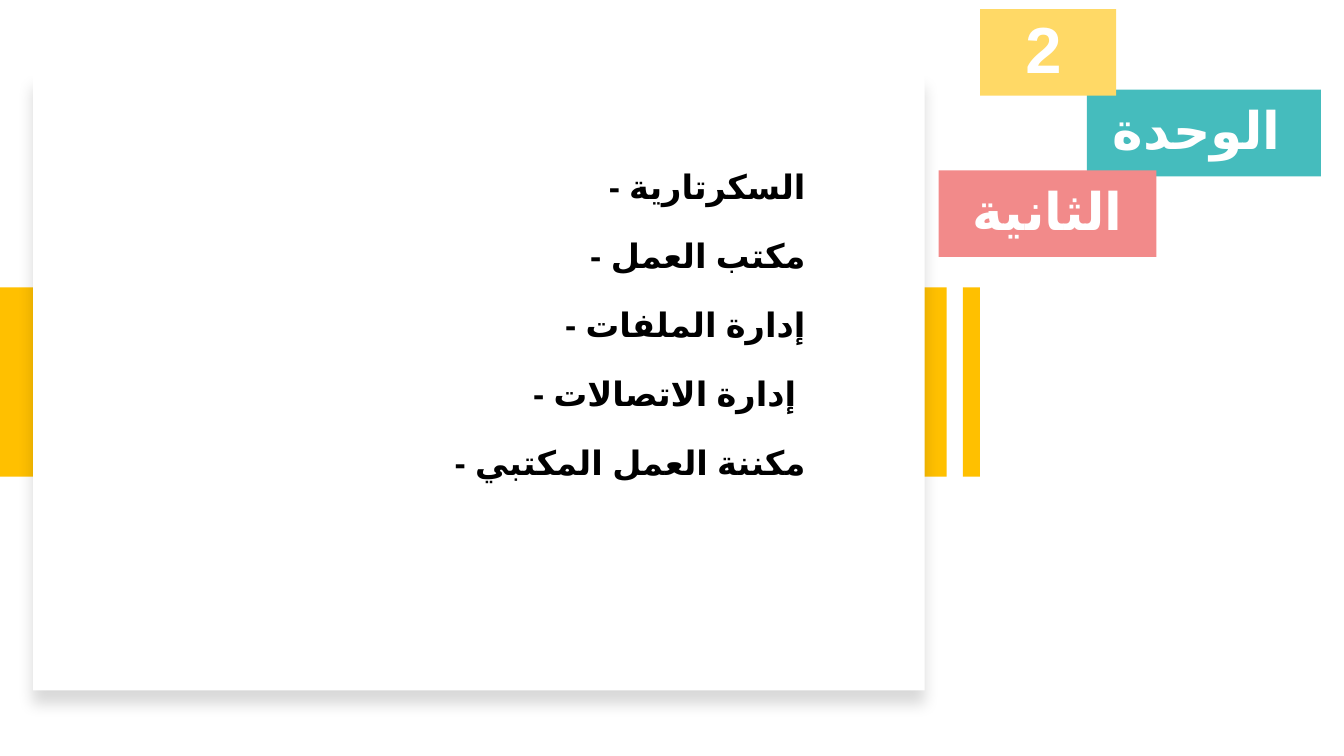
from lxml import etree
from pptx import Presentation
from pptx.dml.color import RGBColor
from pptx.enum.lang import MSO_LANGUAGE_ID
from pptx.enum.shapes import MSO_SHAPE
from pptx.enum.text import MSO_ANCHOR, MSO_AUTO_SIZE, PP_ALIGN
from pptx.oxml.ns import qn
from pptx.util import Inches, Pt

ARABIC = MSO_LANGUAGE_ID.ARABIC
RECTANGLE = MSO_SHAPE.RECTANGLE
CENTER, RIGHT = PP_ALIGN.CENTER, PP_ALIGN.RIGHT
MIDDLE, TOP = MSO_ANCHOR.MIDDLE, MSO_ANCHOR.TOP
NO_FIT, GROW = MSO_AUTO_SIZE.NONE, MSO_AUTO_SIZE.SHAPE_TO_FIT_TEXT

COLORS = {
    "white": "FFFFFF",
    "black": "000000",
    "teal": "45BCBD",
    "pink": "F28A8A",
    "yellow": "FFD966",
    "amber": "FFC000",
}
TOPICS = [
    "- السكرتارية",
    "- مكتب العمل",
    "- إدارة الملفات",
    "- إدارة الاتصالات ",
    "- مكننة العمل المكتبي",
]


class UnitSlide:
    """Holds the slide and the style shared by its elements."""

    font = "Arial"
    label_size = 37

    def __init__(self, presentation):
        self.slide = presentation.slides.add_slide(presentation.slide_layouts[1])
        self.shapes = self.slide.shapes

    def place(self, shape, left, top, width, height):
        shape.left, shape.top = Inches(left), Inches(top)
        shape.width, shape.height = Inches(width), Inches(height)

    def paint(self, shape, color):
        shape.fill.solid()
        shape.fill.fore_color.rgb = RGBColor.from_string(COLORS[color])

    def block(self, color, *box):
        block = self.shapes.add_shape(RECTANGLE, *map(Inches, box))
        self.paint(block, color)
        block.line.fill.background()
        block.shadow.inherit = False
        return block

    def card(self, *box):
        """Add a white panel with a soft shadow below it."""
        card = self.block("white", *box)
        effects = card.element.spPr.find(qn("a:effectLst"))
        shadow = etree.SubElement(
            effects, qn("a:outerShdw"), blurRad=str(Pt(11)), dist=str(Pt(10)),
            dir=str(90 * 60000), algn="t", rotWithShape="0")
        tint = etree.SubElement(shadow, qn("a:srgbClr"), val=COLORS["black"])
        etree.SubElement(tint, qn("a:alpha"), val="15000")

    def add_run(self, paragraph, text, size, color, font=font, bold=True):
        run = paragraph.add_run()
        run.text = text
        run.font.size = Pt(size)
        run.font.name = font
        run.font.bold = bold
        run.font.language_id = ARABIC
        run.font.color.rgb = RGBColor.from_string(COLORS[color])
        # Arabic letters take the complex-script typeface.
        etree.SubElement(run.font._element, qn("a:cs"), typeface=font)

    def label(self, shape, text, size=label_size):
        frame = shape.text_frame
        frame.word_wrap = True
        frame.auto_size = NO_FIT
        frame.vertical_anchor = MIDDLE
        paragraph = frame.paragraphs[0]
        paragraph.alignment = CENTER
        paragraph.line_spacing = 0.9
        self.add_run(paragraph, text, size, "white")
        return paragraph

    def title(self, text, color, *box):
        title = self.shapes.title
        self.place(title, *box)
        self.paint(title, color)
        self.label(title, text)

    def topic_list(self, topics, *box):
        body = self.slide.placeholders[1]
        self.place(body, *box)
        self.shapes.element.append(body.element)  # bring above the card
        frame = body.text_frame
        frame.word_wrap = True
        frame.auto_size = GROW
        frame.vertical_anchor = TOP
        for index, topic in enumerate(topics):
            paragraph = frame.add_paragraph() if index else frame.paragraphs[0]
            paragraph.alignment = RIGHT
            paragraph.line_spacing = 1.5
            paragraph.space_before = Pt(0)
            paragraph.space_after = Pt(6)
            properties = paragraph._p.get_or_add_pPr()
            properties.set("marL", "0")
            properties.set("indent", "0")
            etree.SubElement(properties, qn("a:buNone"))
            self.add_run(paragraph, topic, 24, "black")


def main():
    presentation = Presentation()
    presentation.slide_width = Inches(13.33)
    presentation.slide_height = Inches(7.5)

    unit = UnitSlide(presentation)
    unit.title("الوحدة ", "teal", 10.78, 0.89, 2.32, 0.86)
    unit.block("amber", 0, 2.85, 9.39, 1.88)
    unit.card(0.33, 0.73, 8.84, 6.12)
    unit.block("amber", 9.55, 2.85, 0.17, 1.88)
    unit.topic_list(TOPICS, 0.34, 1.4, 7.75, 3.39)
    unit.label(unit.block("pink", 9.31, 1.69, 2.16, 0.86), "الثانية")
    number = unit.label(unit.block("yellow", 9.72, 0.09, 1.35, 0.86), "2", 46.5)
    unit.add_run(number, " ", 28.7, "black", "Calibri", False)

    presentation.save("out.pptx")


if __name__ == "__main__":
    main()
